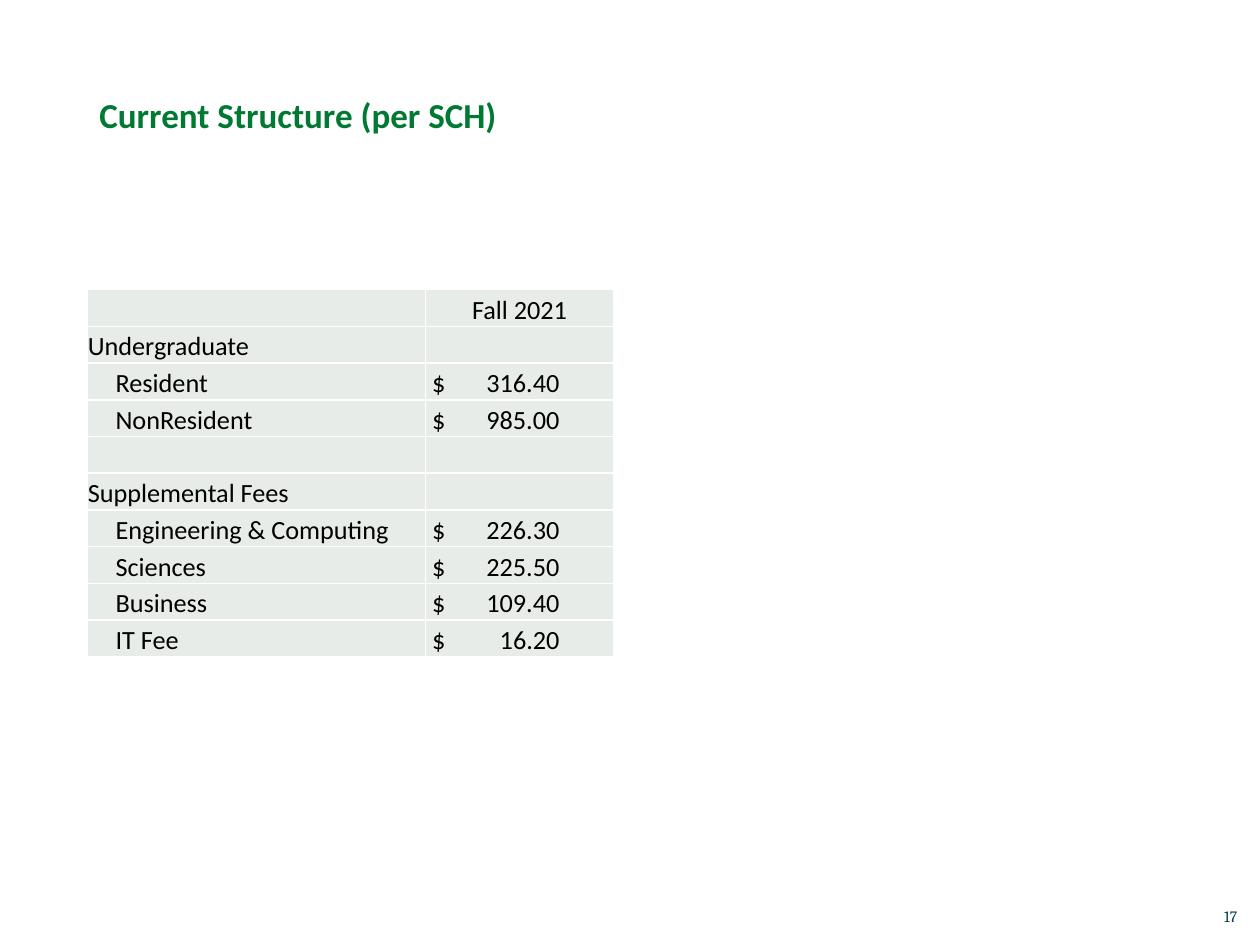
import pptx
import pptx.util
import pptx.dml.color
import pptx.enum.text
import pptx.oxml
from lxml import etree

Cm, Pt = pptx.util.Cm, pptx.util.Pt
MSO_ANCHOR, PP_ALIGN = pptx.enum.text.MSO_ANCHOR, pptx.enum.text.PP_ALIGN

TITLE = "Current Structure (per SCH)"
PAGE_NUMBER = "17"
TERM = "Fall 2021"
FEES = [  # group, then (item, dollars per credit hour)
    ("Undergraduate", [("Resident", 316.40), ("NonResident", 985.00)]),
    ("Supplemental Fees", [("Engineering & Computing", 226.30), ("Sciences", 225.50),
                           ("Business", 109.40), ("IT Fee", 16.20)]),
]

THEME = {
    "title": ("Calibri", 20, "007933"),
    "table": ("Calibri", 15, "000000"),
    "number": ("Cambria", 9, "003B49"),
    "cell": "E7ECE8",
    "border": "FFFFFF",
}
LEFT = Cm(1.75)
COLUMN_WIDTHS = [Cm(6.83), Cm(3.79)]
ROW_HEIGHT = Cm(0.74)
CELL_INSET, ITEM_INSET, AMOUNT_INSET = Cm(0.02), Cm(0.58), Cm(0.13)
AMOUNT_TAB = Cm(2.57)


def color(name):
    return pptx.dml.color.RGBColor.from_string(name)


def style_text(paragraph, role, bold=False):
    name, size, text_color = THEME[role]
    paragraph.font.name = name
    paragraph.font.size = Pt(size)
    paragraph.font.bold = bold
    paragraph.font.color.rgb = color(text_color)


def add_right_tab(paragraph, position):
    properties = paragraph._p.get_or_add_pPr()
    tabs = etree.Element(pptx.oxml.ns.qn("a:tabLst"))
    etree.SubElement(tabs, pptx.oxml.ns.qn("a:tab"), pos=str(int(position)), algn="r")
    properties.insert(0, tabs)


def add_borders(cell):
    properties = cell._tc.get_or_add_tcPr()
    for index, side in enumerate(("lnL", "lnR", "lnT", "lnB")):
        line = etree.Element(pptx.oxml.ns.qn("a:" + side), w=str(int(Pt(1))))
        fill = etree.SubElement(line, pptx.oxml.ns.qn("a:solidFill"))
        etree.SubElement(fill, pptx.oxml.ns.qn("a:srgbClr"), val=THEME["border"])
        properties.insert(index, line)


def table_rows():
    """List (label, label inset, value, value inset) for each row."""
    rows = [("", CELL_INSET, TERM, CELL_INSET)]
    for index, (group, items) in enumerate(FEES):
        if index:
            rows.append(("", CELL_INSET, "", CELL_INSET))
        rows.append((group, CELL_INSET, "", CELL_INSET))
        rows += [(item, ITEM_INSET, f"$\t{amount:.2f}", AMOUNT_INSET) for item, amount in items]
    return rows


def fill_cell(cell, text, inset):
    cell.fill.solid()
    cell.fill.fore_color.rgb = color(THEME["cell"])
    add_borders(cell)
    cell.vertical_anchor = MSO_ANCHOR.BOTTOM
    cell.margin_left, cell.margin_right = inset, CELL_INSET
    cell.margin_top, cell.margin_bottom = CELL_INSET, 0
    paragraph = cell.text_frame.paragraphs[0]
    paragraph.text = text
    style_text(paragraph, "table")
    if text == TERM:
        paragraph.alignment = PP_ALIGN.CENTER
    if "\t" in text:
        add_right_tab(paragraph, AMOUNT_TAB)


def add_fee_table(slide):
    rows = table_rows()
    frame = slide.shapes.add_table(len(rows), len(COLUMN_WIDTHS), LEFT, Cm(5.84),
                                   sum(COLUMN_WIDTHS), ROW_HEIGHT * len(rows))
    table = frame.table
    table.first_row = table.horz_banding = False
    for column, width in zip(table.columns, COLUMN_WIDTHS):
        column.width = width
    for index, (label, label_inset, value, value_inset) in enumerate(rows):
        table.rows[index].height = ROW_HEIGHT
        fill_cell(table.cell(index, 0), label, label_inset)
        fill_cell(table.cell(index, 1), value, value_inset)


def main():
    presentation = pptx.Presentation()
    presentation.slide_width, presentation.slide_height = Cm(25.4), Cm(19.05)
    slide = presentation.slides.add_slide(presentation.slide_layouts[5])

    title = slide.shapes.title
    title.left, title.top, title.width, title.height = LEFT, Cm(1.02), Cm(21.03), Cm(2.67)
    title.text_frame.text = TITLE
    title.text_frame.vertical_anchor = MSO_ANCHOR.MIDDLE
    heading = title.text_frame.paragraphs[0]
    heading.alignment = PP_ALIGN.LEFT
    heading.line_spacing = 0.9
    style_text(heading, "title", bold=True)

    add_fee_table(slide)

    number = slide.shapes.add_textbox(Cm(24.43), Cm(18.16), Cm(1.3), Cm(0.64))
    number.text_frame.text = PAGE_NUMBER
    style_text(number.text_frame.paragraphs[0], "number")
    presentation.save("out.pptx")


if __name__ == "__main__":
    main()
